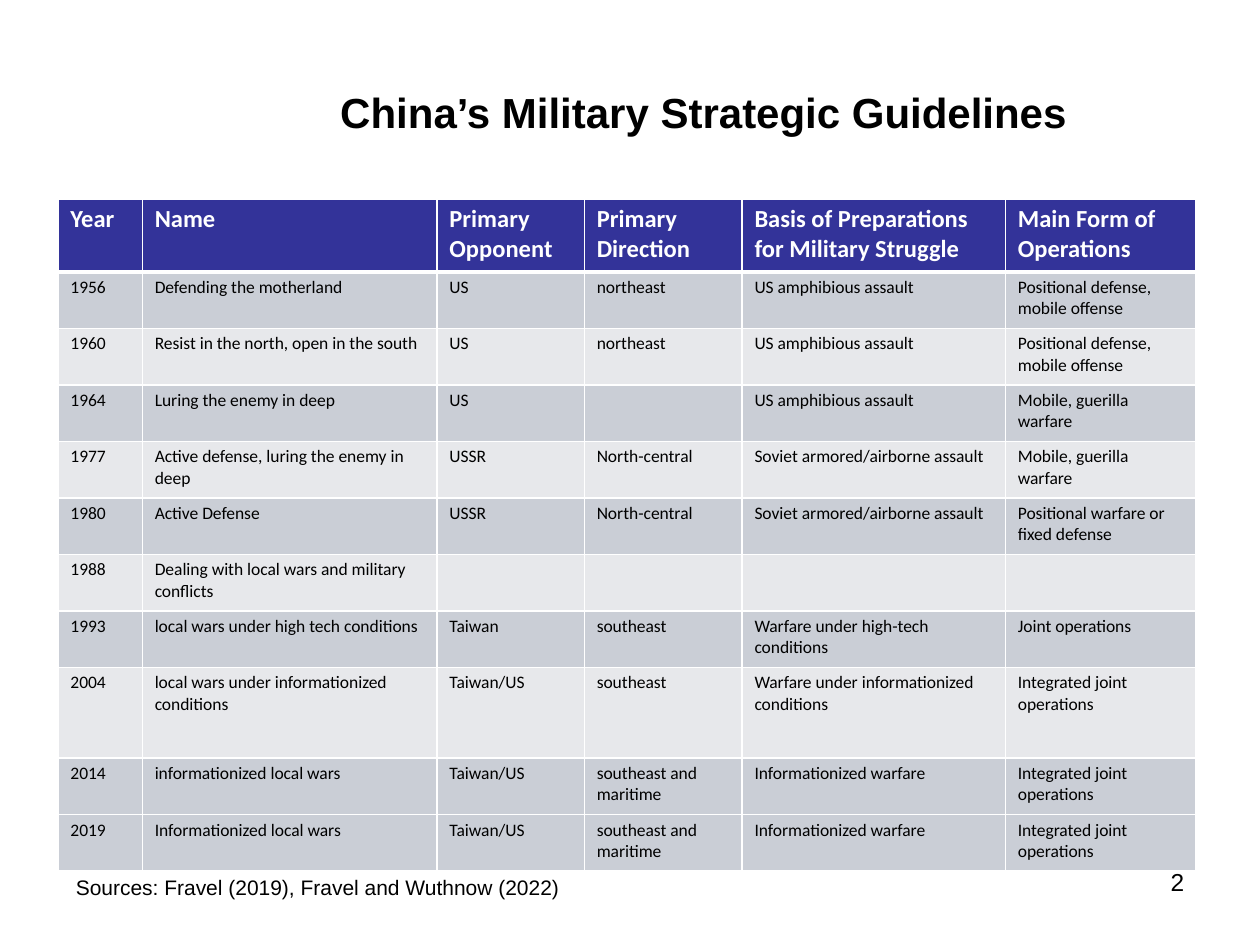
"""Build a slide with a table of China's military strategic guidelines."""
from dataclasses import dataclass
from typing import NamedTuple

from lxml.etree import SubElement
from pptx import Presentation
from pptx.dml.color import RGBColor as Rgb
from pptx.oxml.ns import qn
from pptx.util import Cm, Pt


@dataclass(frozen=True)
class Theme:
    header: str = "333399"
    dark_band: str = "CACED6"
    light_band: str = "E7E8EB"
    ink: str = "000000"
    white: str = "FFFFFF"
    text_font: str = "Arial"
    table_font: str = "Calibri"
    title_pt: int = 24
    number_pt: int = 14
    source_pt: int = 12
    header_pt: int = 14
    body_pt: int = 10
    rule_pt: int = 1
    header_rule_pt: int = 3


class Label(NamedTuple):
    text: str
    left: float
    top: float
    width: float
    height: float
    size: int
    bold: bool = False


class Guideline(NamedTuple):
    year: str
    name: str
    opponent: str = ""
    direction: str = ""
    basis: str = ""
    operations: str = ""


THEME = Theme()
LABELS = [
    Label("China’s Military Strategic Guidelines", 6.86, 1.7, 16.6, 1.07, THEME.title_pt, True),
    Label("2", 23.6, 17.42, 0.6, 0.66, THEME.number_pt),
    Label("Sources: Fravel (2019), Fravel and Wuthnow (2022)", 1.53, 17.58, 10.5, 0.58, THEME.source_pt),
]
HEADER = Guideline("Year", "Name", "Primary Opponent", "Primary Direction",
                   "Basis of Preparations for Military Struggle", "Main Form of Operations")
AMPHIBIOUS = "US amphibious assault"
ARMORED = "Soviet armored/airborne assault"
GUERILLA = "Mobile, guerilla warfare"
INTEGRATED = "Integrated joint operations"
GUIDELINES = [
    Guideline("1956", "Defending the motherland", "US", "northeast", AMPHIBIOUS,
              "Positional defense, mobile offense"),
    Guideline("1960", "Resist in the north, open in the south", "US", "northeast", AMPHIBIOUS,
              "Positional defense,\nmobile offense"),
    Guideline("1964", "Luring the enemy in deep", "US", "", AMPHIBIOUS, GUERILLA),
    Guideline("1977", "Active defense, luring the enemy in deep", "USSR", "North-central",
              ARMORED, GUERILLA),
    Guideline("1980", "Active Defense", "USSR", "North-central", ARMORED,
              "Positional warfare or fixed defense"),
    Guideline("1988", "Dealing with local wars and military conflicts"),
    Guideline("1993", "local wars under high tech conditions", "Taiwan", "southeast",
              "Warfare under high-tech conditions", "Joint operations"),
    Guideline("2004", "local wars under informationized conditions", "Taiwan/US", "southeast",
              "Warfare under informationized conditions", INTEGRATED),
    Guideline("2014", "informationized local wars", "Taiwan/US", "southeast and maritime",
              "Informationized warfare", INTEGRATED),
    Guideline("2019", "Informationized local wars", "Taiwan/US", "southeast and maritime",
              "Informationized warfare", INTEGRATED),
]
COLUMN_WIDTHS = [1.7, 5.94, 2.97, 3.18, 5.31, 3.84]
HEADER_HEIGHT, ROW_HEIGHT = 1.47, 1.14
TALL_ROWS = {"2004": 1.83}


def write(tf, text: str, *, size: int, font: str, color: str, bold: bool = False) -> None:
    """Fill a text frame with one paragraph per line of text."""
    for i, line in enumerate(text.split("\n")):
        p = tf.add_paragraph() if i else tf.paragraphs[0]
        p.font.size = Pt(size)
        if line:
            r = p.add_run()
            r.text = line
            r.font.size, r.font.name, r.font.bold = Pt(size), font, bold
            r.font.color.rgb = Rgb.from_string(color)


def add_label(slide, label: Label) -> None:
    """Place a text box outside the table."""
    sp = slide.shapes.add_textbox(*map(Cm, (label.left, label.top, label.width, label.height)))
    tf = sp.text_frame
    tf.word_wrap = True
    tf.margin_left = tf.margin_right = tf.margin_bottom = 0
    tf.margin_top = Cm(0.05)
    write(tf, label.text, size=label.size, font=THEME.text_font, color=THEME.ink, bold=label.bold)


def set_borders(cell, top: int, bottom: int) -> None:
    """Rule all four sides of a cell in white."""
    tc_pr = cell._tc.get_or_add_tcPr()
    widths = {"L": THEME.rule_pt, "R": THEME.rule_pt, "T": top, "B": bottom}
    for side, width in widths.items():
        ln = SubElement(tc_pr, qn(f"a:ln{side}"), w=str(Pt(width)))
        SubElement(SubElement(ln, qn("a:solidFill")), qn("a:srgbClr"), val=THEME.white)


def add_guidelines_table(slide) -> None:
    """Draw the table of guidelines with alternating bands."""
    heights = [HEADER_HEIGHT] + [TALL_ROWS.get(g.year, ROW_HEIGHT) for g in GUIDELINES]
    rows = [HEADER] + GUIDELINES
    table = slide.shapes.add_table(len(rows), len(COLUMN_WIDTHS), Cm(1.17), Cm(4.01),
                                   Cm(sum(COLUMN_WIDTHS)), Cm(sum(heights))).table
    table.horz_banding = False
    for column, width in zip(table.columns, COLUMN_WIDTHS):
        column.width = Cm(width)
    for i, (guideline, height) in enumerate(zip(rows, heights)):
        table.rows[i].height = Cm(height)
        is_header = i == 0
        is_dark = i % 2 == 1 or i == len(rows) - 1
        fill = THEME.header if is_header else THEME.dark_band if is_dark else THEME.light_band
        for j, text in enumerate(guideline):
            cell = table.cell(i, j)
            cell.margin_left = cell.margin_right = Cm(0.25)
            cell.margin_top, cell.margin_bottom = Cm(0.1), 0
            set_borders(cell, top=THEME.header_rule_pt if i == 1 else THEME.rule_pt,
                        bottom=THEME.header_rule_pt if is_header else THEME.rule_pt)
            cell.fill.solid()
            cell.fill.fore_color.rgb = Rgb.from_string(fill)
            write(cell.text_frame, text, font=THEME.table_font, bold=is_header,
                  size=THEME.header_pt if is_header else THEME.body_pt,
                  color=THEME.white if is_header else THEME.ink)


def main() -> None:
    """Build and save the slide."""
    prs = Presentation()
    prs.slide_width, prs.slide_height = Cm(25.4), Cm(19.05)
    s = prs.slides.add_slide(prs.slide_layouts[6])
    add_guidelines_table(s)
    for label in LABELS:
        add_label(s, label)
    prs.save("out.pptx")


if __name__ == "__main__":
    main()
